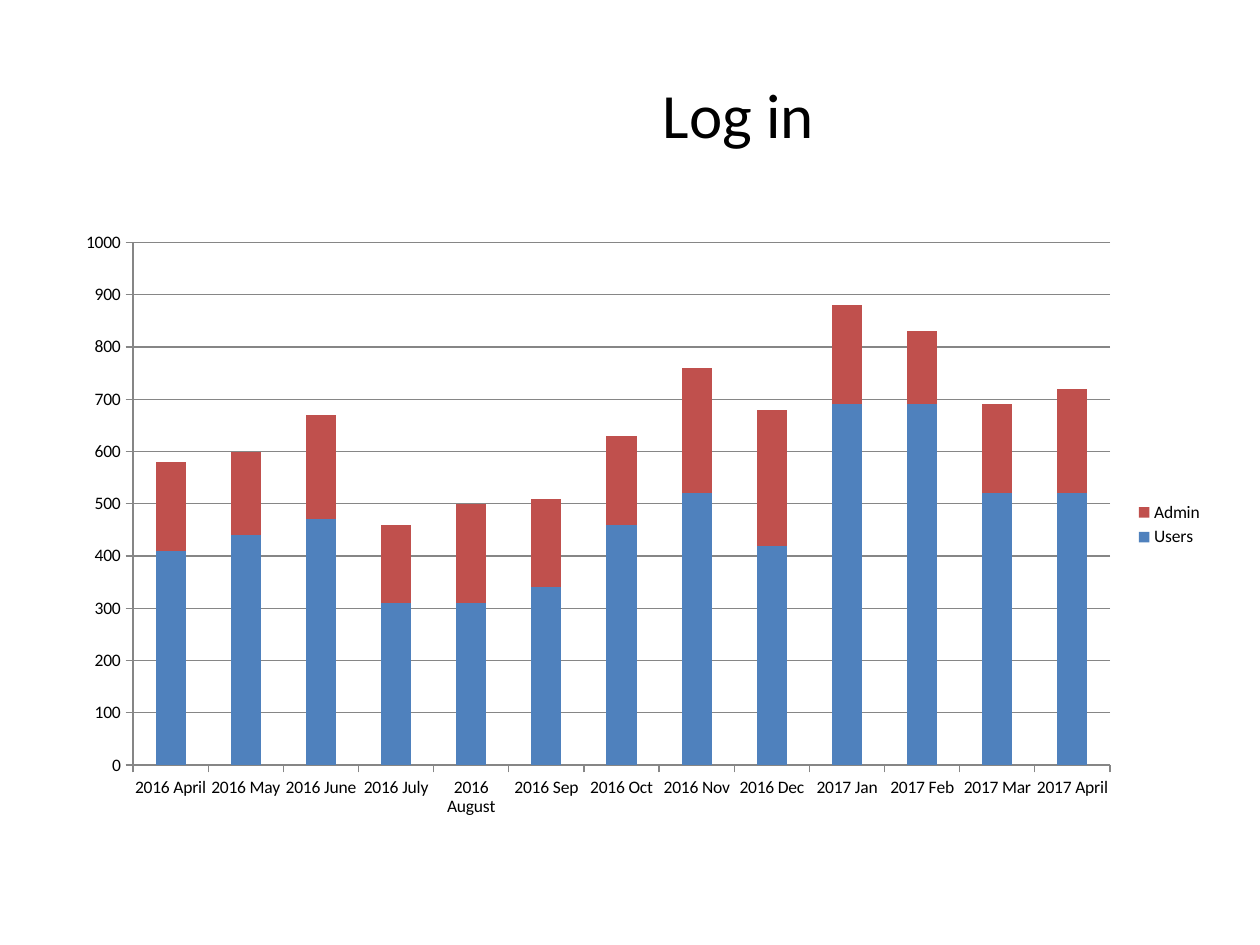
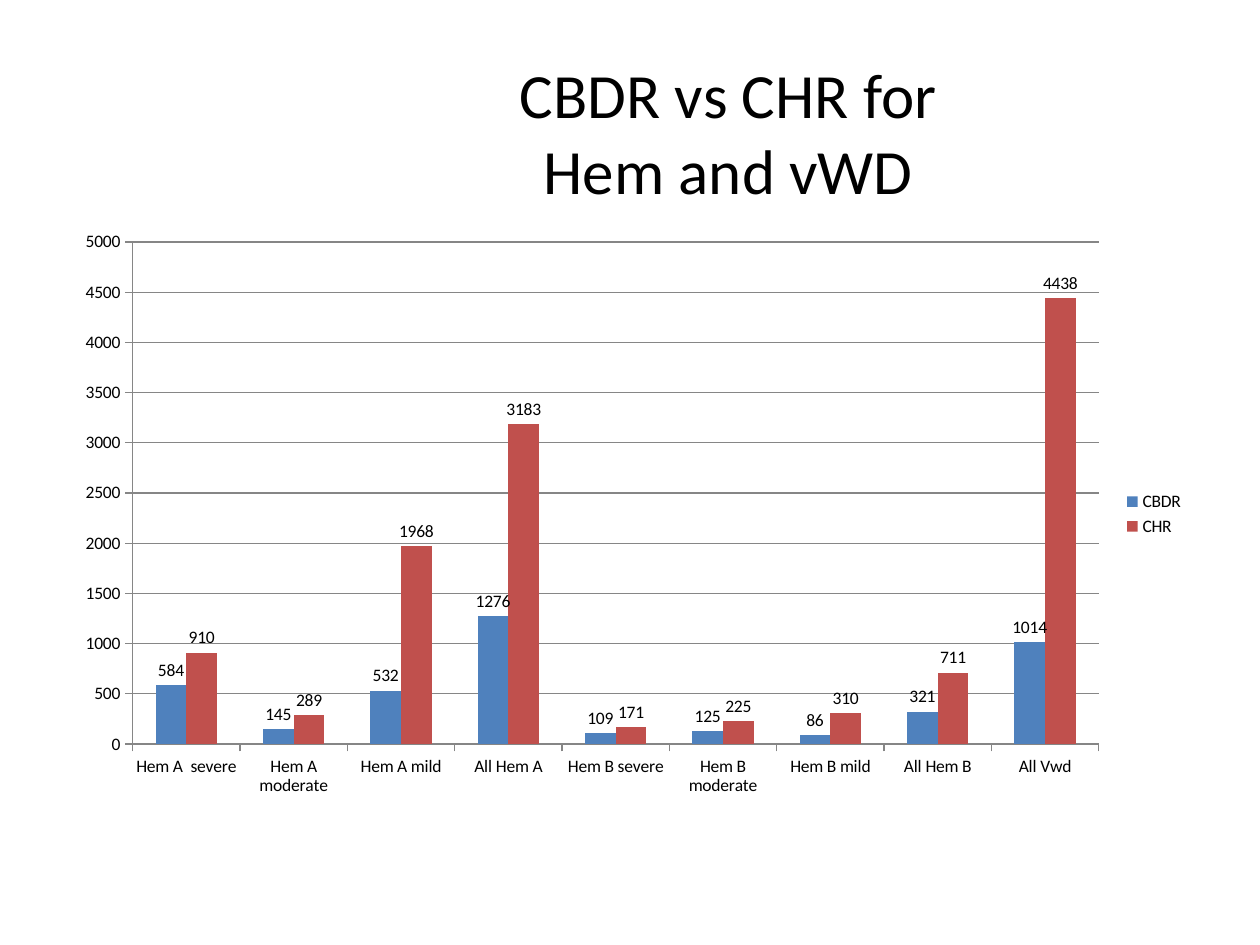
from dataclasses import dataclass

from pptx import Presentation
from pptx.chart.data import CategoryChartData
from pptx.dml.color import RGBColor
from pptx.enum.chart import XL_CHART_TYPE, XL_LABEL_POSITION, XL_LEGEND_POSITION, XL_TICK_MARK
from pptx.enum.text import MSO_ANCHOR, PP_ALIGN
from pptx.util import Inches, Pt


@dataclass(frozen=True)
class Theme:
    font: str = "Calibri"
    title_size: Pt = Pt(36)
    chart_size: Pt = Pt(10)
    text: RGBColor = RGBColor(0x00, 0x00, 0x00)
    background: RGBColor = RGBColor(0xFF, 0xFF, 0xFF)
    axis: RGBColor = RGBColor(0x86, 0x86, 0x86)
    series: tuple = (RGBColor(0x4F, 0x81, 0xBD), RGBColor(0xC0, 0x50, 0x4D))


theme = Theme()

chart_slides = [
    {
        "title": "Log in",
        "title_position": (3.98, 0.3),
        "chart_size": (9.15, 4.83),
        "type": XL_CHART_TYPE.COLUMN_STACKED,
        "overlap": 100,
        "labels": False,
        "maximum": 1000,
        "step": 100,
        "categories": [
            "2016 April", "2016 May", "2016 June", "2016 July", "2016 August", "2016 Sep", "2016 Oct",
            "2016 Nov", "2016 Dec", "2017 Jan", "2017 Feb", "2017 Mar", "2017 April",
        ],
        "series": {
            "Users": [410, 440, 470, 310, 310, 340, 460, 520, 420, 690, 690, 520, 520],
            "Admin": [170, 160, 200, 150, 190, 170, 170, 240, 260, 190, 140, 170, 200],
        },
    },
    {
        "title": "CBDR vs CHR for Hem and vWD",
        "title_position": (3.9, 0.44),
        "chart_size": (9, 4.66),
        "type": XL_CHART_TYPE.COLUMN_CLUSTERED,
        "overlap": 0,
        "labels": True,
        "maximum": 5000,
        "step": 500,
        "categories": [
            "Hem A  severe", "Hem A moderate", "Hem A mild", "All Hem A", "Hem B severe",
            "Hem B moderate", "Hem B mild", "All Hem B", "All Vwd",
        ],
        "series": {
            "CBDR": [584, 145, 532, 1276, 109, 125, 86, 321, 1014],
            "CHR": [910, 289, 1968, 3183, 171, 225, 310, 711, 4438],
        },
    },
]


def style_font(font, size):
    font.name = theme.font
    font.size = size
    font.color.rgb = theme.text


presentation = Presentation()
presentation.slide_width = Inches(10)
presentation.slide_height = Inches(7.5)
blank_layout = presentation.slide_layouts[6]

for content in chart_slides:
    slide = presentation.slides.add_slide(blank_layout)
    slide.background.fill.solid()
    slide.background.fill.fore_color.rgb = theme.background

    left, top = content["title_position"]
    title = slide.shapes.add_textbox(Inches(left), Inches(top), Inches(3.76), Inches(1.2))
    title.text_frame.word_wrap = True
    title.text_frame.vertical_anchor = MSO_ANCHOR.MIDDLE
    paragraph = title.text_frame.paragraphs[0]
    paragraph.alignment = PP_ALIGN.CENTER
    run = paragraph.add_run()
    run.text = content["title"]
    style_font(run.font, theme.title_size)

    chart_data = CategoryChartData(number_format="0")
    chart_data.categories = content["categories"]
    for name, values in content["series"].items():
        chart_data.add_series(name, values)
    width, height = content["chart_size"]
    chart = slide.shapes.add_chart(
        content["type"], Inches(0.5), Inches(1.75), Inches(width), Inches(height), chart_data
    ).chart
    style_font(chart.font, theme.chart_size)
    chart.has_title = False
    chart.has_legend = True
    chart.legend.position = XL_LEGEND_POSITION.RIGHT
    chart.legend.include_in_layout = False

    plot = chart.plots[0]
    plot.gap_width = 150
    plot.overlap = content["overlap"]
    plot.vary_by_categories = False
    for series, color in zip(plot.series, theme.series):
        series.format.fill.solid()
        series.format.fill.fore_color.rgb = color
        series.invert_if_negative = False
    if content["labels"]:
        plot.has_data_labels = True
        labels = plot.data_labels
        labels.show_value = True
        labels.number_format = "0"
        labels.number_format_is_linked = False
        labels.position = XL_LABEL_POSITION.OUTSIDE_END
        style_font(labels.font, theme.chart_size)

    value_axis = chart.value_axis
    value_axis.minimum_scale = 0
    value_axis.maximum_scale = content["maximum"]
    value_axis.major_unit = content["step"]
    value_axis.has_major_gridlines = True
    for axis in (chart.category_axis, value_axis):
        axis.major_tick_mark = XL_TICK_MARK.OUTSIDE
        axis.minor_tick_mark = XL_TICK_MARK.NONE
    for ruled in (chart.category_axis, value_axis, value_axis.major_gridlines):
        ruled.format.line.color.rgb = theme.axis
        ruled.format.line.width = Pt(0.75)

presentation.save("out.pptx")
